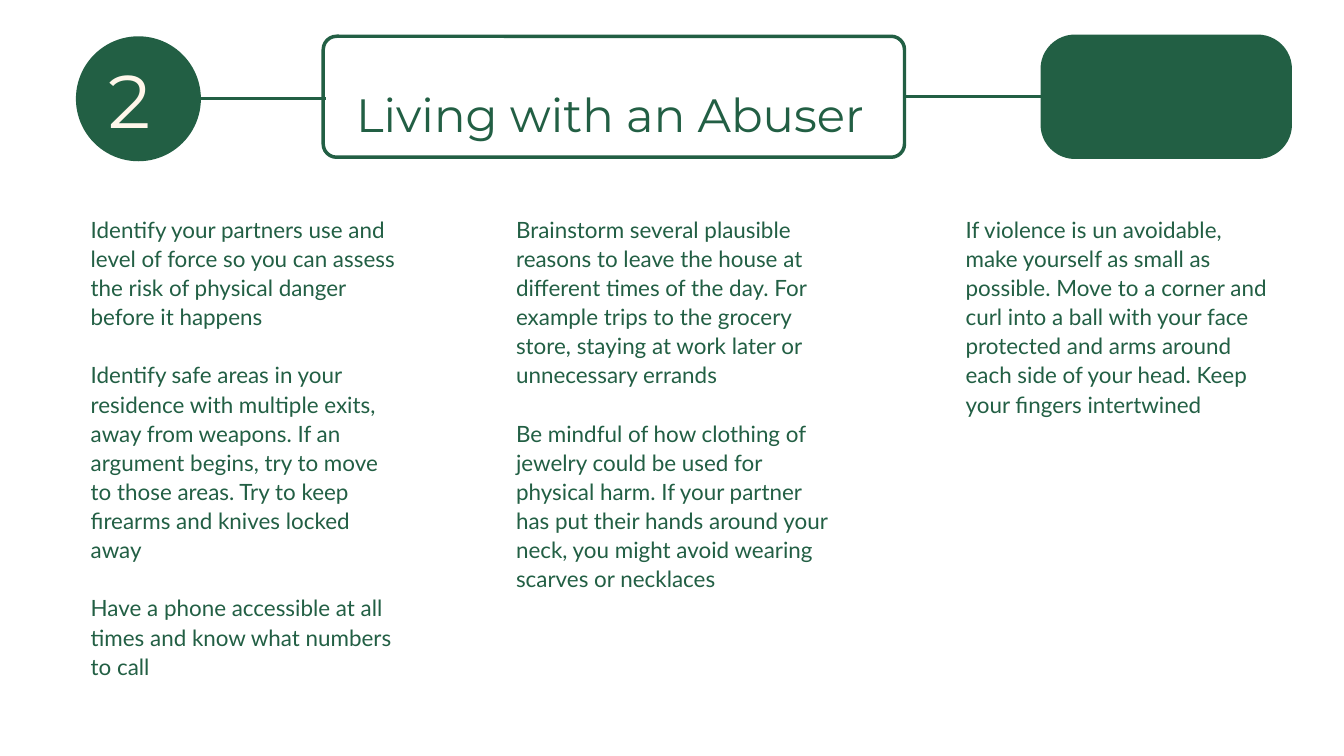
from lxml import etree
from pptx import Presentation
from pptx import util as u
from pptx.dml.color import RGBColor
from pptx.enum import shapes, text
from pptx.oxml.ns import qn

GREEN = "225F44"
CREAM = "FFF6EA"
COLUMN_TOP = 3.18
COLUMN_WIDTH = 4.64
LINE_SPACING = 31.2

COLUMNS = [
    (1.35, 7.36, [
        "Identify your partners use and level of force so you can assess the risk of physical danger before it happens",
        "Identify safe areas in your residence with multiple exits, away from weapons. If an argument begins, try to move to those areas. Try to keep firearms and knives locked away",
        "Have a phone accessible at all times and know what numbers to call",
    ]),
    (7.68, 6.49, [
        "Brainstorm several plausible reasons to leave the house at different times of the day. For example trips to the grocery store, staying at work later or unnecessary errands",
        "Be mindful of how clothing of jewelry could be used for physical harm. If your partner has put their hands around your neck, you might avoid wearing scarves or necklaces",
    ]),
    (14.37, 3.45, [
        "If violence is un avoidable, make yourself as small as possible. Move to a corner and curl into a ball with your face protected and arms around each side of your head. Keep your fingers intertwined",
    ]),
]


def color(value):
    return RGBColor.from_string(value)


def place(shape, left, top, width, height):
    shape.left, shape.top = u.Inches(left), u.Inches(top)
    shape.width, shape.height = u.Inches(width), u.Inches(height)


def write(shape, paragraphs, font, size, ink, spacing, gap=0):
    frame = shape.text_frame
    frame.word_wrap = True
    frame.auto_size = text.MSO_AUTO_SIZE.NONE
    frame.vertical_anchor = text.MSO_ANCHOR.TOP
    frame.margin_left = frame.margin_right = 0
    frame.margin_top = frame.margin_bottom = 0
    for index, words in enumerate(paragraphs):
        paragraph = frame.add_paragraph() if index else frame.paragraphs[0]
        paragraph.alignment = text.PP_ALIGN.LEFT
        paragraph.line_spacing = u.Pt(spacing)
        paragraph.space_before = u.Pt(gap if index else 0)
        run = paragraph.add_run()
        run.text = words
        run.font.name = font
        run.font.size = u.Pt(size)
        run.font.color.rgb = color(ink)


def add_text(slide, box, *style):
    shape = slide.shapes.add_textbox(*map(u.Inches, box))
    write(shape, *style)


def add_panel(slide, kind, box, filled=True, outlined=True, corner=None):
    shape = slide.shapes.add_shape(kind, *map(u.Inches, box))
    shape.shadow.inherit = False
    if corner is not None:
        shape.adjustments[0] = corner
    if filled:
        shape.fill.solid()
        shape.fill.fore_color.rgb = color(GREEN)
    else:
        shape.fill.background()
    if outlined:
        shape.line.color.rgb = color(GREEN)
        shape.line.width = u.Pt(3.75)
    else:
        shape.line.fill.background()
    return shape


def add_line(slide, left, right, y):
    line = slide.shapes.add_connector(
        shapes.MSO_CONNECTOR.STRAIGHT,
        u.Inches(left), u.Inches(y), u.Inches(right), u.Inches(y))
    line.line.color.rgb = color(GREEN)
    line.line.width = u.Pt(3)
    etree.SubElement(line._element.spPr, qn("a:effectLst"))
    return line


def add_header(slide):
    rounded = shapes.MSO_SHAPE.ROUNDED_RECTANGLE
    frame = add_panel(slide, rounded, (4.81, 0.54, 8.65, 1.8), filled=False, corner=0.11)
    add_panel(slide, shapes.MSO_SHAPE.OVAL, (1.13, 0.54, 1.86, 1.86), outlined=False)
    add_line(slide, 2.98, 4.85, 1.47)
    block = add_panel(slide, rounded, (15.51, 0.54, 3.69, 1.8), corner=0.27)
    link = add_line(slide, 13.46, 15.51, 1.44)
    link.begin_connect(frame, 3)
    link.end_connect(block, 1)

    title = slide.shapes.title
    place(title, 5.3, 0.77, 7.88, 1.18)
    write(title, ["Living with an Abuser"], "Montserrat", 50, GREEN, 96)
    add_text(slide, (1.62, 0.8, 0.4, 1.33), ["2"], "Montserrat", 80, CREAM, 96)


def main():
    presentation = Presentation()
    presentation.slide_width = u.Inches(20)
    presentation.slide_height = u.Inches(11.25)
    slide = presentation.slides.add_slide(presentation.slide_layouts[5])
    add_header(slide)
    for left, height, paragraphs in COLUMNS:
        add_text(slide, (left, COLUMN_TOP, COLUMN_WIDTH, height), paragraphs,
                 "Lato", 24, GREEN, LINE_SPACING, LINE_SPACING)
    presentation.save("out.pptx")


if __name__ == "__main__":
    main()
